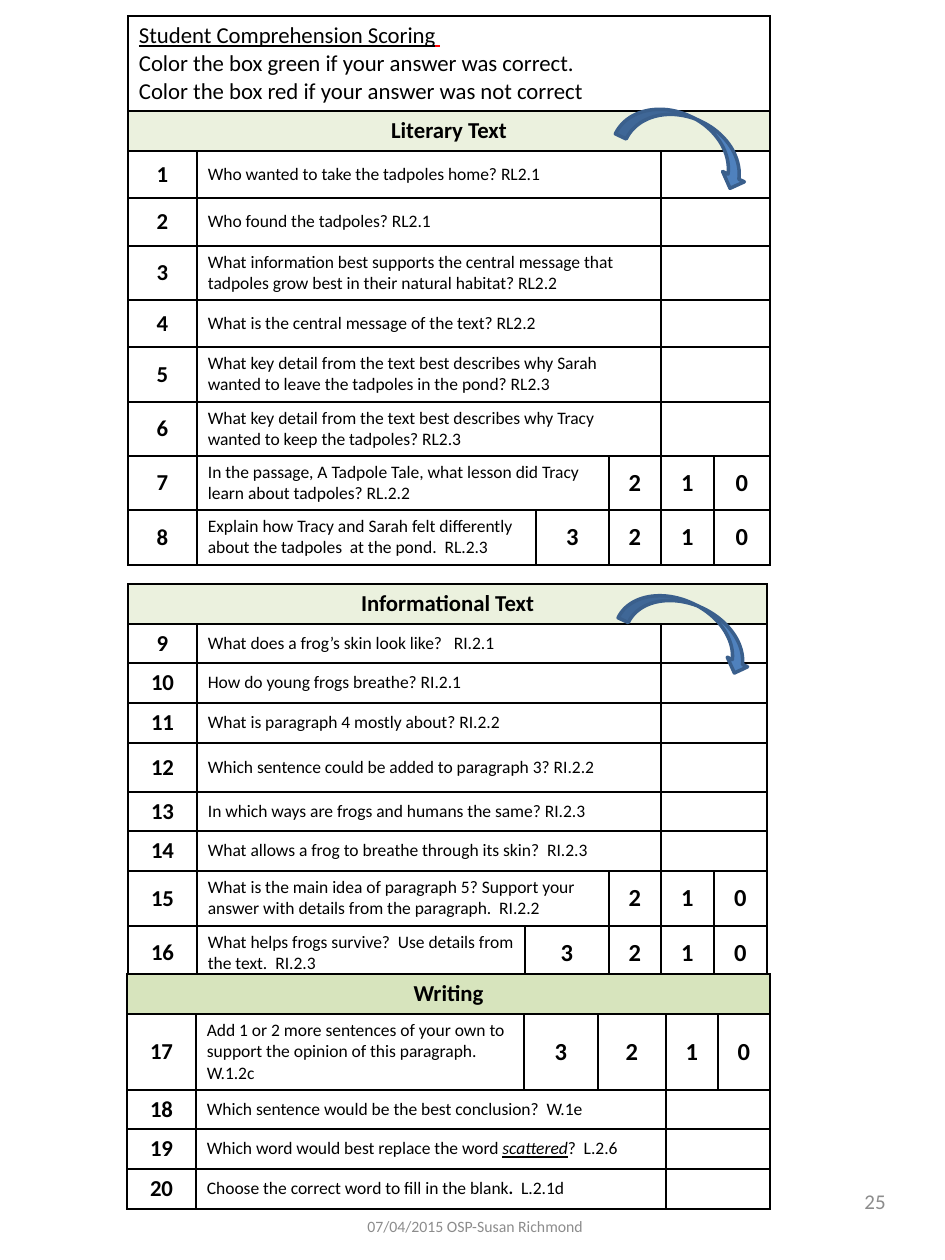
from lxml.etree import SubElement
from pptx import Presentation
from pptx.dml.color import RGBColor
from pptx.enum.shapes import MSO_SHAPE as Shape
from pptx.enum.text import MSO_ANCHOR as Anchor, PP_ALIGN as Align
from pptx.oxml.ns import qn
from pptx.util import Emu, Pt

BLACK = RGBColor(0x00, 0x00, 0x00)
WHITE = RGBColor(0xFF, 0xFF, 0xFF)
RED = RGBColor(0xFF, 0x00, 0x00)
GRAY = RGBColor(0x8C, 0x8C, 0x8C)
PALE_GREEN = RGBColor(0xEB, 0xF1, 0xDE)
GREEN = RGBColor(0xD7, 0xE4, 0xBD)
BLUE = RGBColor(0x4F, 0x81, 0xBD)
DARK_BLUE = RGBColor(0x3A, 0x5F, 0x8C)

INTRO = [
    [("Student Comprehension Scoring", {"underline": True}),
     (" ", {"underline": True, "color": RED})],
    "Color the box green if your answer was correct.",
    "Color the box red if your answer was not correct",
]
LITERARY = [
    (47, "Who wanted to take the tadpoles home? RL2.1", 0),
    (48, "Who found the tadpoles? RL2.1", 0),
    (54, "What information best supports the central message that tadpoles "
         "grow best in their natural habitat? RL2.2", 0),
    (47, "What is the central message of the text? RL2.2", 0),
    (55, "What key detail from the text best describes why Sarah wanted to "
         "leave the tadpoles in the pond? RL2.3", 0),
    (54, "What key detail from the text best describes why Tracy wanted to "
         "keep the tadpoles? RL2.3", 0),
    (54, "In the passage, A Tadpole Tale, what lesson did Tracy learn about "
         "tadpoles? RL.2.2", 3),
    (55, "Explain how Tracy and Sarah felt differently about the tadpoles  "
         "at the pond.  RL.2.3", 4),
]
INFORMATIONAL = [
    (39, "What does a frog’s skin look like?   RI.2.1", 0),
    (40, "How do young frogs breathe? RI.2.1", 0),
    (40, "What is paragraph 4 mostly about? RI.2.2", 0),
    (49, "Which sentence could be added to paragraph 3? RI.2.2", 0),
    (39, "In which ways are frogs and humans the same? RI.2.3", 0),
    (40, "What allows a frog to breathe through its skin?  RI.2.3", 0),
    (55, "What is the main idea of paragraph 5? Support your answer with "
         "details from the paragraph.  RI.2.2", 3),
    (54, "What helps frogs survive?  Use details from the text.  RI.2.3", 4),
]
WRITING = [
    (76, "Add 1 or 2 more sentences of your own to support the opinion of "
         "this paragraph.  W.1.2c", 4),
    (39, "Which sentence would be the best conclusion?  W.1e", 0),
    (40, [("Which word would best replace the word ", {}),
          ("scattered", {"italic": True, "underline": True}),
          ("?  L.2.6", {})], 0),
    (40, [("Choose the correct word to fill in the blank", {}),
          (".  ", {"bold": True}), ("L.2.1d", {})], 0),
]


def px(length):
    """Turn slide pixels into EMU."""
    return Emu(round(length * 914400 / 126))


def write_text(frame, paragraphs, size=13, color=BLACK, bold=False,
               align=Align.LEFT):
    """Fill a text frame with paragraphs, each a string or a list of runs."""
    frame.word_wrap = True
    for index, content in enumerate(paragraphs):
        paragraph = frame.add_paragraph() if index else frame.paragraphs[0]
        paragraph.alignment = align
        runs = [(content, {})] if isinstance(content, str) else content
        for text, style in runs:
            run = paragraph.add_run()
            run.text = text
            font = run.font
            font.name = "Calibri"
            font.size = Pt(size)
            font.bold = style.get("bold", bold)
            font.italic = style.get("italic", False)
            font.underline = style.get("underline", False)
            font.color.rgb = style.get("color", color)


def format_cell(cell, fill):
    """Give a cell its borders, fill, margins and small empty-text size."""
    properties = cell._tc.get_or_add_tcPr()
    for side in ("a:lnL", "a:lnR", "a:lnT", "a:lnB"):
        line = SubElement(properties, qn(side), w=str(Pt(1)))
        solid = SubElement(line, qn("a:solidFill"))
        SubElement(solid, qn("a:srgbClr"), val=str(BLACK))
    cell.fill.solid()
    cell.fill.fore_color.rgb = fill
    cell.vertical_anchor = Anchor.MIDDLE
    cell.margin_left = cell.margin_right = px(11)
    cell.margin_top = cell.margin_bottom = px(5)
    if not cell.text_frame.text:
        SubElement(cell.text_frame.paragraphs[0]._p, qn("a:endParaRPr"), sz="1000")


def add_score_table(slide, left, top, widths, title, title_fill, questions,
                    first_number, intro=None):
    """Place a titled table of numbered questions with score boxes."""
    banners = [(95, intro, WHITE, {})] if intro else []
    banners.append((40, [title], title_fill,
                    {"bold": True, "align": Align.CENTER}))
    heights = [row[0] for row in banners + questions]
    last = len(widths) - 1
    table = slide.shapes.add_table(
        len(heights), len(widths), px(left), px(top),
        px(sum(widths)), px(sum(heights))).table
    table.first_row = table.horz_banding = False
    for column, width in zip(table.columns, widths):
        column.width = px(width)
    for row, height in zip(table.rows, heights):
        row.height = px(height)

    fills = [WHITE] * len(heights)
    for row, (_, paragraphs, fill, style) in enumerate(banners):
        table.cell(row, 0).merge(table.cell(row, last))
        write_text(table.cell(row, 0).text_frame, paragraphs, **style)
        fills[row] = fill

    for index, (_, question, scores) in enumerate(questions):
        row = len(banners) + index
        write_text(table.cell(row, 0).text_frame, [str(first_number + index)],
                   bold=True, align=Align.CENTER)
        question_end = last - (scores or 2)
        if question_end > 1:
            table.cell(row, 1).merge(table.cell(row, question_end))
        write_text(table.cell(row, 1).text_frame, [question], size=10)
        if not scores:
            table.cell(row, last - 1).merge(table.cell(row, last))
        for score in range(scores):
            write_text(table.cell(row, last - score).text_frame, [str(score)],
                       size=14, bold=True, align=Align.CENTER)

    for row, fill in enumerate(fills):
        for column in range(len(widths)):
            format_cell(table.cell(row, column), fill)


def add_score_arrow(slide, left, top, width, height):
    """Place a tilted curved arrow that points to the score boxes."""
    arrow = slide.shapes.add_shape(Shape.CURVED_DOWN_ARROW, px(left), px(top),
                                   px(width), px(height))
    arrow.shadow.inherit = False
    arrow.rotation = 25.4
    arrow.fill.solid()
    arrow.fill.fore_color.rgb = BLUE
    arrow.line.color.rgb = DARK_BLUE
    arrow.line.width = Pt(2)


def add_footer_text(slide, left, top, width, height, text, **style):
    """Place one gray line of footer text."""
    box = slide.shapes.add_textbox(px(left), px(top), px(width), px(height))
    box.text_frame.vertical_anchor = Anchor.MIDDLE
    write_text(box.text_frame, [text], color=GRAY, **style)


def main():
    """Build and save the scoring slide."""
    presentation = Presentation()
    presentation.slide_width, presentation.slide_height = px(945), px(1260)
    slide = presentation.slides.add_slide(presentation.slide_layouts[6])
    add_footer_text(slide, 325, 1193, 300, 67, "07/04/2015 OSP-Susan Richmond",
                    size=9, align=Align.CENTER)
    add_footer_text(slide, 678, 1168, 220, 67, "25", size=12, align=Align.RIGHT)
    add_score_table(slide, 128, 584, [69, 328, 84, 52, 53, 53],
                    "Informational Text", PALE_GREEN, INFORMATIONAL, 9)
    add_score_table(slide, 128, 16, [69, 339, 73, 52, 53, 56],
                    "Literary Text", PALE_GREEN, LITERARY, 1, intro=INTRO)
    add_score_arrow(slide, 619, 118, 139, 48)
    add_score_arrow(slide, 621, 605, 140, 45)
    add_score_table(slide, 127, 974, [69, 328, 74, 68, 52, 52],
                    "Writing", GREEN, WRITING, 17)
    presentation.save("out.pptx")


if __name__ == "__main__":
    main()
